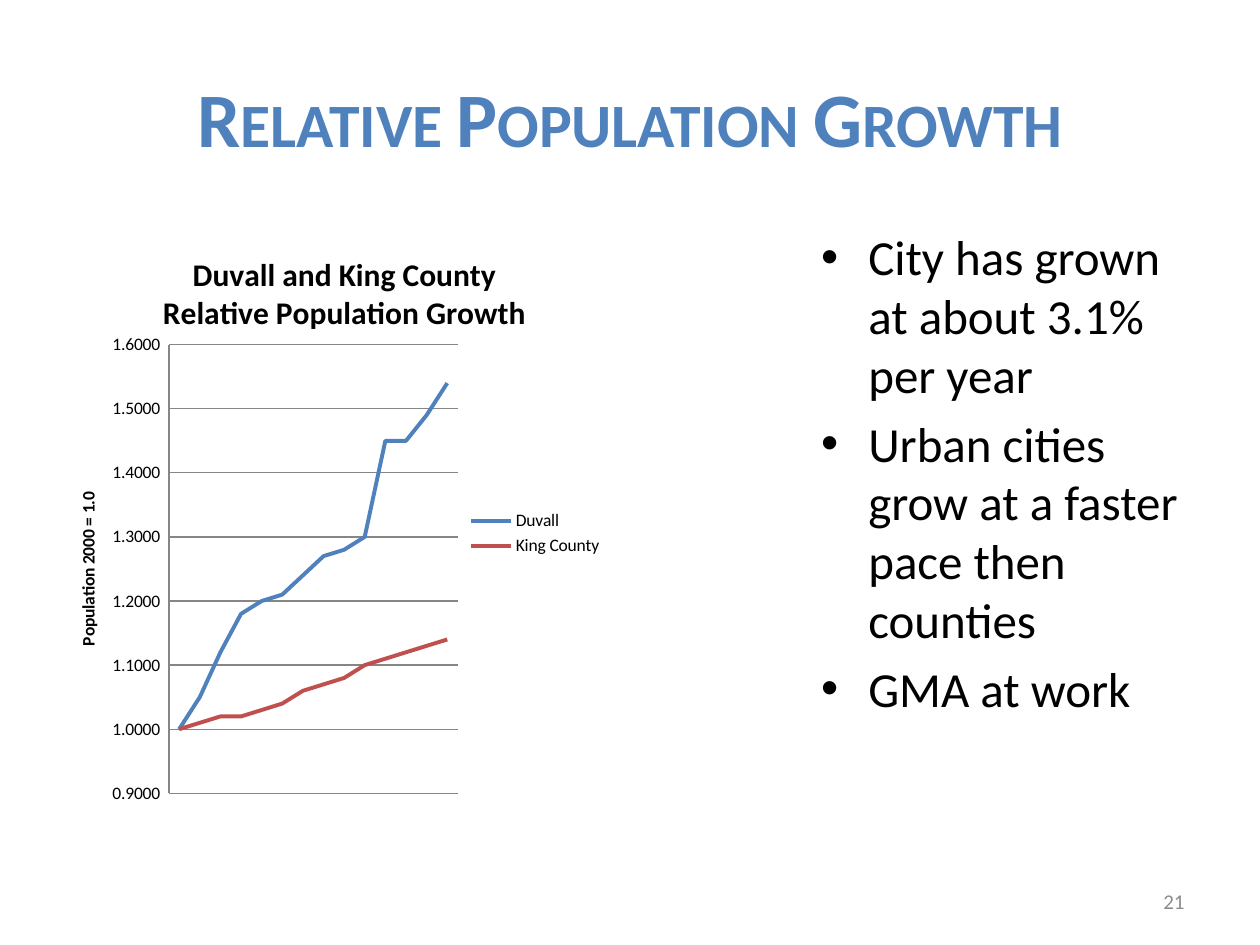
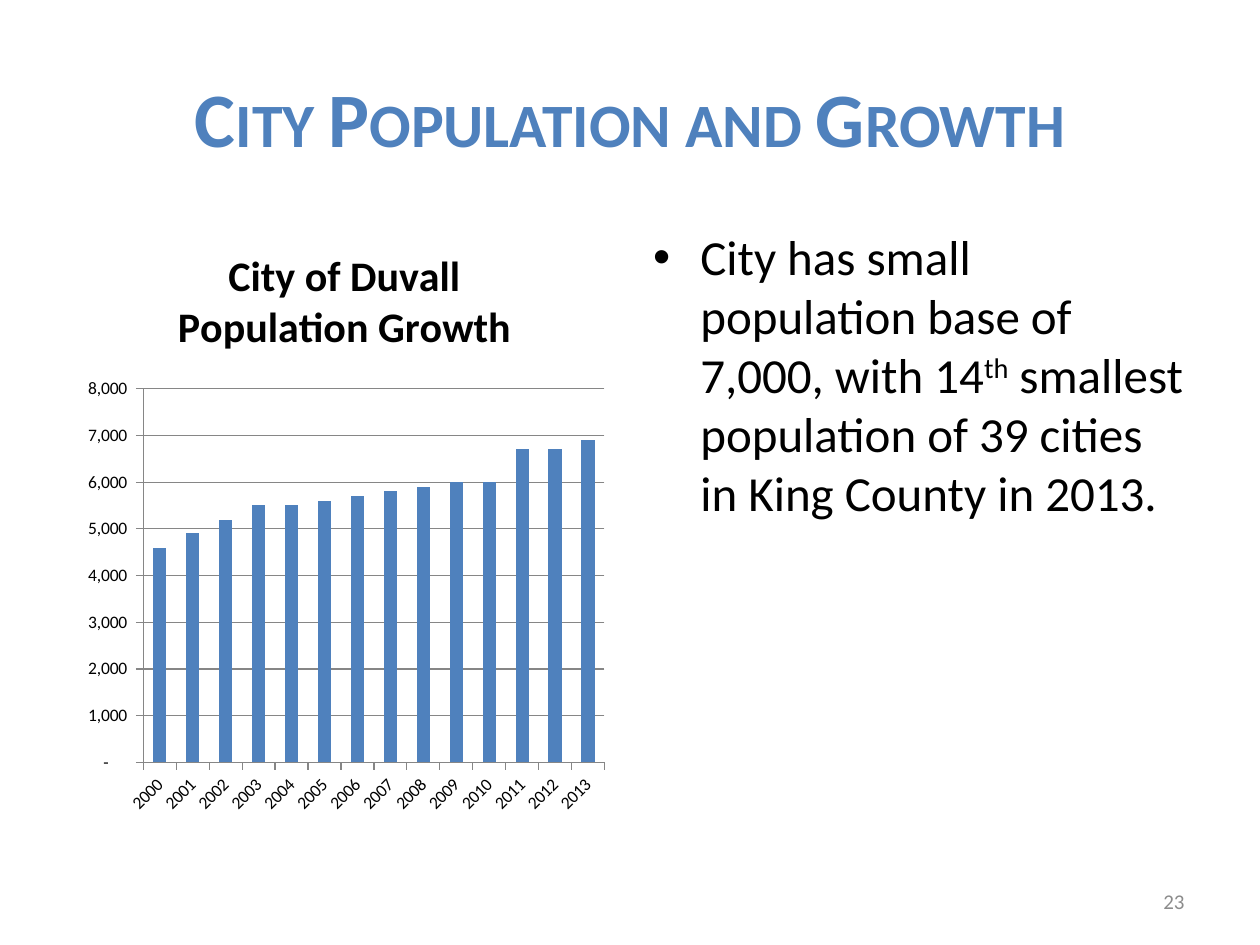
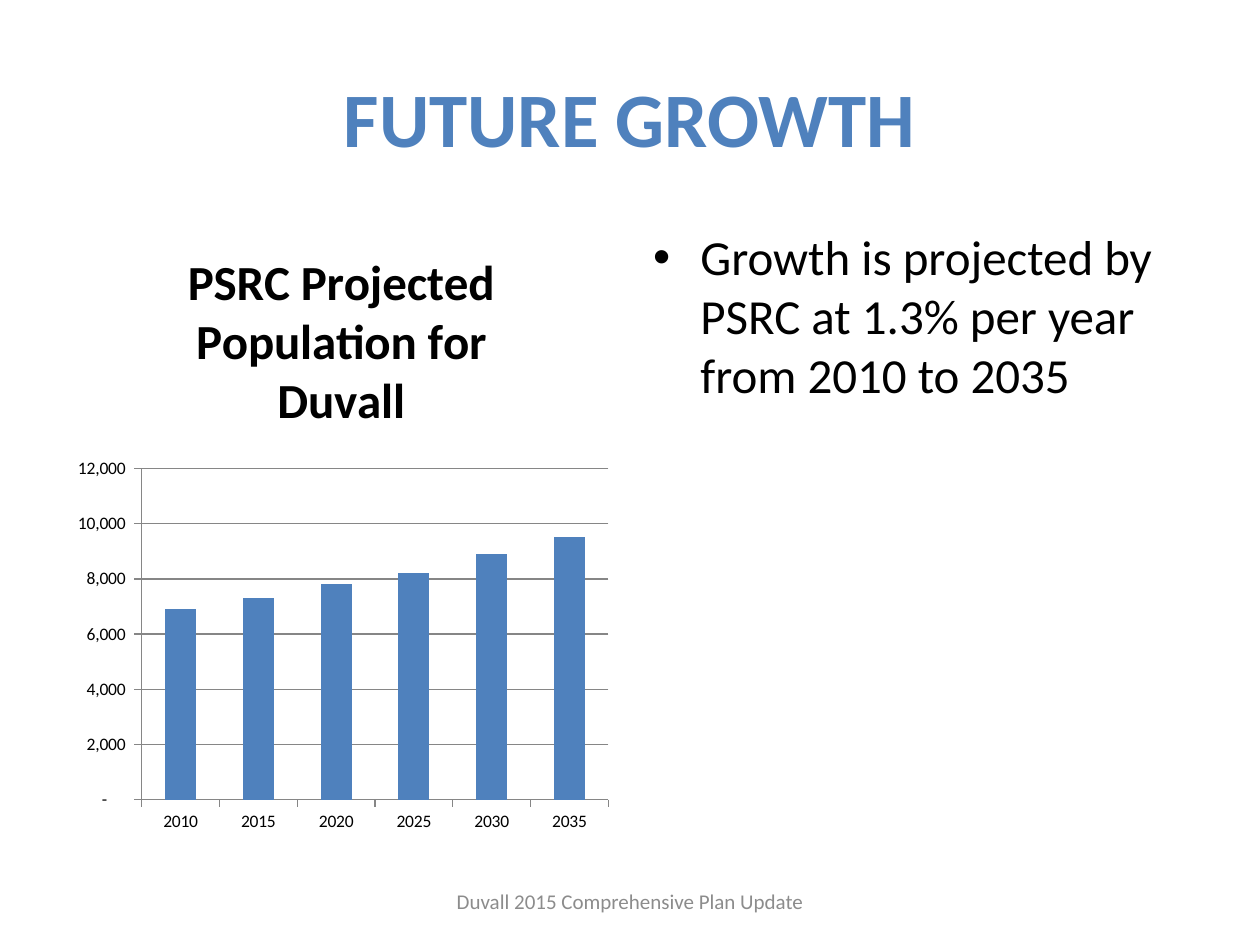
from lxml import etree
from pptx import Presentation
from pptx.chart.data import CategoryChartData
from pptx.dml.color import RGBColor
from pptx.enum.chart import (XL_CHART_TYPE, XL_LEGEND_POSITION,
                             XL_TICK_LABEL_POSITION, XL_TICK_MARK)
from pptx.enum.text import MSO_ANCHOR, PP_ALIGN
from pptx.oxml.ns import qn
from pptx.util import Pt

LINE, COLUMN = XL_CHART_TYPE.LINE, XL_CHART_TYPE.COLUMN_CLUSTERED
RIGHT, CENTER, MIDDLE = PP_ALIGN.RIGHT, PP_ALIGN.CENTER, MSO_ANCHOR.MIDDLE
TICK_OUT, TICK_NONE = XL_TICK_MARK.OUTSIDE, XL_TICK_MARK.NONE
LABEL_NONE = XL_TICK_LABEL_POSITION.NONE
LEGEND_RIGHT = XL_LEGEND_POSITION.RIGHT

BLUE = RGBColor(0x4F, 0x81, 0xBD)
RED = RGBColor(0xC0, 0x50, 0x4D)
BLACK = RGBColor(0, 0, 0)
GRAY = RGBColor(0x8C, 0x8C, 0x8C)
GRID = RGBColor(0x86, 0x86, 0x86)

FACE = "Calibri"
HEAD = {"name": FACE, "size": Pt(44), "bold": True}
BODY = {"name": FACE, "size": Pt(28)}
FOOT = {"name": FACE, "size": Pt(12)}
SMALL = {"name": FACE, "size": Pt(10)}

# Boxes: left, top, width, height in points
HEAD_BOX = (36, 21.6, 648, 90)
WIDE_BOX = (366, 126, 318, 356.4)
SLIM_BOX = (462, 126, 222, 356.4)
FOOT_BOX = (246, 500.4, 228, 28.8)
PAGE_BOX = (516, 500.4, 168, 28.8)

YEARS = range(2000, 2014)
COUNT = '_(* #,##0_);_(* \\(#,##0\\);_(* "-"??_);_(@_)'
RATIO = '_(* #,##0.0000_);_(* \\(#,##0.0000\\);_(* "-"??_);_(@_)'

# Content; each bullet is a list of (text, raised)
SLIDES = [
    {"title": "Relative Population Growth", "caps": True,
     "box": SLIM_BOX,
     "list": [[("City has grown at about 3.1% per year", False)],
              [("Urban cities grow at a faster pace then counties", False)],
              [("GMA at work", False)]],
     "foot": ("21", PAGE_BOX, RIGHT),
     "chart": {"kind": LINE, "box": (42, 132, 309.6, 345.6),
               "title": "Duvall and King County\nRelative Population Growth",
               "size": 18, "cats": YEARS, "range": (0.9, 1.6, 0.1),
               "format": RATIO, "label": "Population 2000 = 1.0",
               "plot": (0.176, 0.188, 0.533, 0.742),
               "series": [
                   ("Duvall", BLUE, (1, 1.05, 1.12, 1.18, 1.2, 1.21, 1.24,
                                     1.27, 1.28, 1.3, 1.45, 1.45, 1.49, 1.54)),
                   ("King County", RED, (1, 1.01, 1.02, 1.02, 1.03, 1.04, 1.06,
                                         1.07, 1.08, 1.1, 1.11, 1.12, 1.13,
                                         1.14))]}},
    {"title": "City Population and Growth", "caps": True,
     "box": WIDE_BOX,
     "list": [[("City has small population base of 7,000, with 14", False),
               ("th", True),
               (" smallest population of 39 cities in King County in 2013.",
                False)]],
     "foot": ("23", PAGE_BOX, RIGHT),
     "chart": {"kind": COLUMN, "box": (42, 126, 309.6, 345.6),
               "title": "City of Duvall Population Growth", "size": 24,
               "cats": YEARS, "range": (0, 8000, 1000), "format": COUNT,
               "turn": -45,
               "series": [
                   ("Series 1", BLUE, (4600, 4900, 5200, 5500, 5500, 5600,
                                       5700, 5800, 5900, 6000, 6000, 6700,
                                       6700, 6900))]}},
    {"title": "FUTURE GROWTH", "caps": False,
     "box": WIDE_BOX,
     "list": [[("Growth is projected by PSRC at 1.3% per year "
                "from 2010 to 2035", False)]],
     "foot": ("Duvall 2015 Comprehensive Plan Update", FOOT_BOX, CENTER),
     "chart": {"kind": COLUMN, "box": (36, 126, 318, 356.4),
               "title": "PSRC Projected Population for Duvall", "size": 28,
               "cats": range(2010, 2036, 5), "range": (0, 12000, 2000),
               "format": COUNT,
               "series": [
                   ("Series 1", BLUE, (6900, 7300, 7800, 8200, 8900, 9500))]}},
]


def style(font, look, color=BLACK):
    for key, val in look.items():
        setattr(font, key, val)
    font.color.rgb = color


def place(shape, box):
    for key, val in zip(("left", "top", "width", "height"), box):
        setattr(shape, key, Pt(val))


def caption(frame, text, size):
    frame.text = text
    for para in frame.paragraphs:
        for run in para.runs:
            style(run.font, {"name": FACE, "size": Pt(size), "bold": True})


def add_title(slide, item):
    place(slide.shapes.title, HEAD_BOX)
    run = slide.shapes.title.text_frame.paragraphs[0].add_run()
    run.text = item["title"]
    style(run.font, HEAD, BLUE)
    if item["caps"]:
        run.font._element.set("cap", "small")


def add_list(slide, item):
    body = slide.placeholders[1]
    place(body, item["box"])
    frame = body.text_frame
    for i, parts in enumerate(item["list"]):
        para = frame.add_paragraph() if i else frame.paragraphs[0]
        for text, raised in parts:
            run = para.add_run()
            run.text = text
            style(run.font, BODY)
            if raised:
                run.font._element.set("baseline", "30000")


def add_foot(slide, text, box, align):
    frame = slide.shapes.add_textbox(*map(Pt, box)).text_frame
    frame.word_wrap = True
    frame.vertical_anchor = MIDDLE
    para = frame.paragraphs[0]
    para.alignment = align
    run = para.add_run()
    run.text = text
    style(run.font, FOOT, GRAY)


def fix_plot(chart, spots):
    """Pin the inner plot area to shares of the chart's size."""
    area = chart._chartSpace.find(".//" + qn("c:plotArea"))
    for old in area.findall(qn("c:layout")):
        area.remove(old)
    layout = etree.Element(qn("c:layout"))
    area.insert(0, layout)
    manual = etree.SubElement(layout, qn("c:manualLayout"))
    pairs = [("layoutTarget", "inner"), ("xMode", "edge"), ("yMode", "edge")]
    for tag, val in pairs + list(zip("xywh", spots)):
        etree.SubElement(manual, qn("c:" + tag)).set("val", str(val))


def add_graph(slide, spec):
    data = CategoryChartData()
    data.categories = [str(year) for year in spec["cats"]]
    for name, _, vals in spec["series"]:
        data.add_series(name, vals)
    chart = slide.shapes.add_chart(
        spec["kind"], *map(Pt, spec["box"]), data).chart
    lined = spec["kind"] == LINE
    style(chart.font, SMALL)
    chart.has_title = True
    caption(chart.chart_title.text_frame, spec["title"], spec["size"])

    # Axes
    cat, val = chart.category_axis, chart.value_axis
    for axis in (cat, val):
        axis.major_tick_mark = TICK_NONE if lined else TICK_OUT
        axis.minor_tick_mark = TICK_NONE
    val.has_major_gridlines = True
    for part in (cat, val, val.major_gridlines):
        part.format.line.color.rgb = GRID
        part.format.line.width = Pt(0.75)
    val.minimum_scale, val.maximum_scale, val.major_unit = spec["range"]
    val.tick_labels.number_format = spec["format"]
    val.tick_labels.number_format_is_linked = False
    if "label" in spec:
        caption(val.axis_title.text_frame, spec["label"], 10)
    if "turn" in spec:
        style(cat.tick_labels.font, SMALL)
        turn = cat._element.find(qn("c:txPr")).find(qn("a:bodyPr"))
        turn.set("rot", str(spec["turn"] * 60000))

    # Series
    plot = chart.plots[0]
    plot.vary_by_categories = False
    for line, (_, color, _) in zip(plot.series, spec["series"]):
        if lined:
            line.smooth = False
            line.format.line.color.rgb = color
            line.format.line.width = Pt(2.25)
        else:
            line.format.fill.solid()
            line.format.fill.fore_color.rgb = color

    # Legend and plot area
    chart.has_legend = lined
    if lined:
        cat.tick_label_position = LABEL_NONE
        chart.legend.position = LEGEND_RIGHT
        chart.legend.include_in_layout = False
        fix_plot(chart, spec["plot"])
    else:
        plot.gap_width = 150


def main():
    deck = Presentation()
    deck.slide_width, deck.slide_height = Pt(720), Pt(540)
    for item in SLIDES:
        slide = deck.slides.add_slide(deck.slide_layouts[1])
        add_title(slide, item)
        add_list(slide, item)
        add_graph(slide, item["chart"])
        add_foot(slide, *item["foot"])
    deck.save("out.pptx")


if __name__ == "__main__":
    main()
